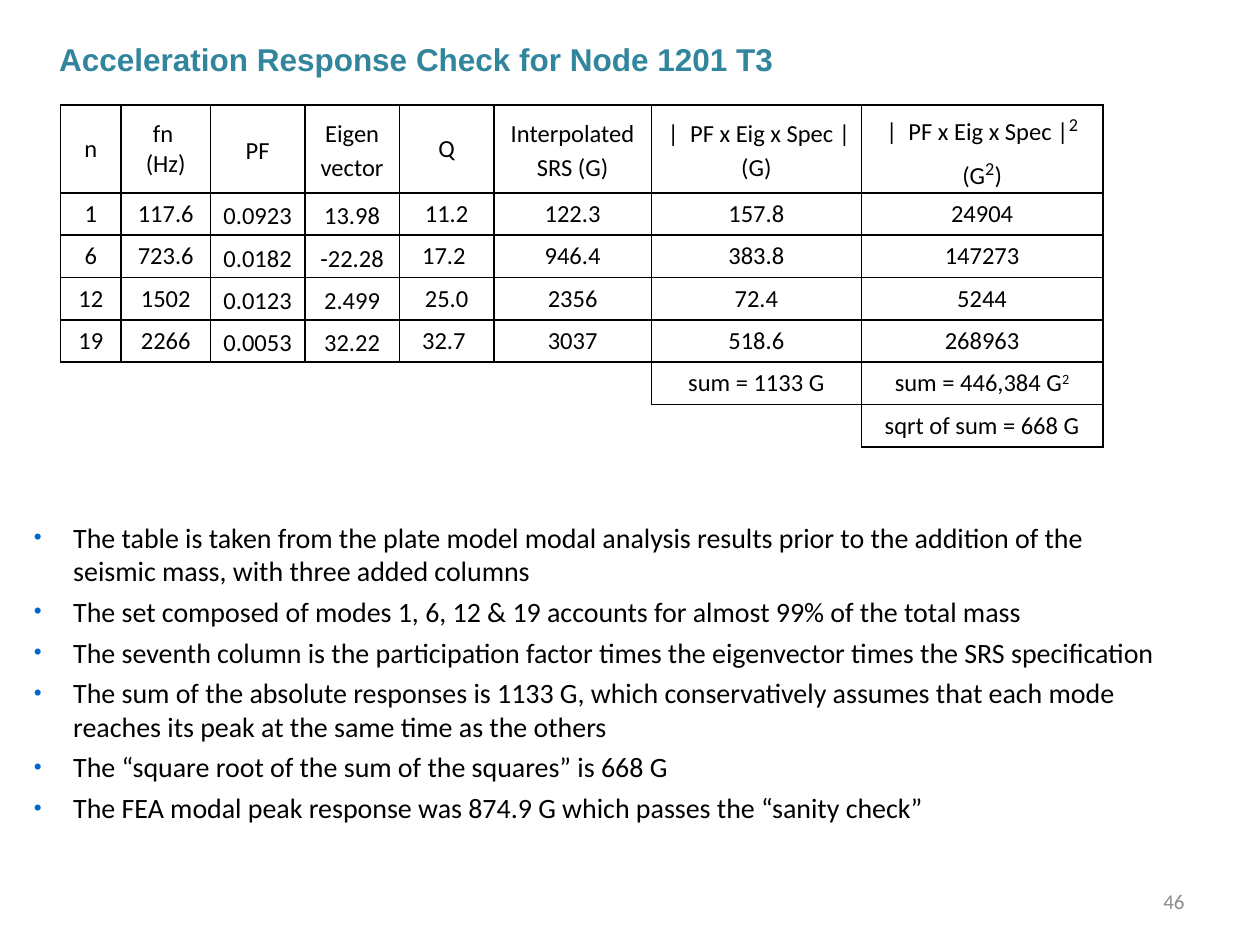
import pptx
import pptx.util
import pptx.dml.color
import pptx.enum.text
import pptx.oxml.ns
import lxml.etree

Pt = pptx.util.Pt
ALIGN = pptx.enum.text.PP_ALIGN
MIDDLE = pptx.enum.text.MSO_ANCHOR.MIDDLE
COLORS = {"title": "31859C", "body": "000000", "bullet": "0066CC",
          "border": "000000", "number": "8C8C8C"}
FORMATS = {
    "title": {"size": Pt(18), "name": "Arial", "bold": True},
    "body": {"size": Pt(16), "name": "Calibri"},
    "cell": {"size": Pt(14), "name": "Calibri"},
    "header_power": {"size": Pt(18), "name": "Calibri"},
    "number": {"size": Pt(12), "name": "Calibri"},
}
GAPS = {"space_before": Pt(2), "space_after": Pt(2)}


def add_run(paragraph, text, style, color, **layout):
    run = paragraph.add_run()
    run.text = text
    run.font.color.rgb = pptx.dml.color.RGBColor.from_string(COLORS[color])
    for target, values in ((run.font, FORMATS[style]), (paragraph, layout)):
        for attribute, value in values.items():
            setattr(target, attribute, value)
    return run


def add_xml(parent, tag, **attributes):
    return lxml.etree.SubElement(parent, pptx.oxml.ns.qn(tag), attributes)


deck = pptx.Presentation()
deck.slide_width, deck.slide_height = Pt(720), Pt(540)
slide = deck.slides.add_slide(deck.slide_layouts[6])

# Slide number
number = slide.shapes.add_textbox(Pt(516), Pt(500.5), Pt(168), Pt(28.75)).text_frame
number.word_wrap = True
number.vertical_anchor = MIDDLE
add_run(number.paragraphs[0], "46", "number", "number", alignment=ALIGN.RIGHT)

# Modal table: "\n" parts paragraphs, "^" switches superscript on and off
modes = [
    ["n", "fn \n(Hz)", "PF", "Eigen\nvector", "Q", "Interpolated SRS (G)",
     " |  PF x Eig x Spec |\n(G)", "|  PF x Eig x Spec |^2^\n(G^2^)"],
    ["1", "117.6", "0.0923", "13.98", "11.2", "122.3", "157.8", "24904"],
    ["6", "723.6", "0.0182", "-22.28", "17.2 ", "946.4", "383.8", "147273"],
    ["12", "1502", "0.0123", "2.499", "25.0", "2356", "72.4", "5244"],
    ["19", "2266", "0.0053", "32.22", "32.7 ", "3037", "518.6", "268963"],
    [""] * 6 + ["sum = 1133 G", "sum = 446,384 G^2^"],
    [""] * 7 + ["sqrt of sum = 668 G"],
]
column_widths = [34.75, 51, 54, 54, 54, 90, 120, 138]
row_heights = [50.25] + [24.2] * 6
table = slide.shapes.add_table(
    len(modes), len(column_widths), Pt(34.5), Pt(60),
    Pt(sum(column_widths)), Pt(sum(row_heights))).table
table.first_row = table.horz_banding = False
for column, width in zip(table.columns, column_widths):
    column.width = Pt(width)
for row, height in zip(table.rows, row_heights):
    row.height = Pt(height)

for r, mode in enumerate(modes):
    for c, content in enumerate(mode):
        cell = table.cell(r, c)
        side = 0.5 if r and c > 5 else 5
        margins = {"margin_left": Pt(side), "margin_right": Pt(side),
                   "margin_top": Pt(0), "margin_bottom": Pt(0),
                   "vertical_anchor": MIDDLE}
        for attribute, value in margins.items():
            setattr(cell, attribute, value)

        # An edge is drawn where the cell or its neighbour holds text
        neighbours = {"a:lnL": (r, c - 1), "a:lnR": (r, c + 1),
                      "a:lnT": (r - 1, c), "a:lnB": (r + 1, c)}
        for edge, (nr, nc) in neighbours.items():
            inside = 0 <= nr < len(modes) and 0 <= nc < len(mode)
            drawn = content or (inside and modes[nr][nc])
            line = add_xml(cell._tc.get_or_add_tcPr(), edge, w=str(Pt(1)))
            if drawn:
                add_xml(add_xml(line, "a:solidFill"), "a:srgbClr", val=COLORS["border"])
            else:
                add_xml(line, "a:noFill")
        cell.fill.background()
        if not content:
            continue

        spacing = 1.15 if (r and c in (2, 3)) or (not r and c in (2, 3, 5, 6, 7)) else 1.0
        for i, text in enumerate(content.split("\n")):
            frame = cell.text_frame
            paragraph = frame.add_paragraph() if i else frame.paragraphs[0]
            for j, part in enumerate(text.split("^")):
                if not part:
                    continue
                power = j % 2 == 1
                style = "header_power" if power and not r else "cell"
                run = add_run(paragraph, part, style, "body",
                              alignment=ALIGN.CENTER, line_spacing=spacing)
                if power:
                    run._r.get_or_add_rPr().set("baseline", "30000")

# Bulleted remarks
remarks = [
    "The table is taken from the plate model modal analysis results prior to the "
    "addition of the seismic mass, with three added columns",
    "The set composed of modes 1, 6, 12 & 19 accounts for almost 99% of the total mass",
    "The seventh column is the participation factor times the eigenvector times the "
    "SRS specification",
    "The sum of the absolute responses is 1133 G, which conservatively assumes that "
    "each mode reaches its peak at the same time as the others",
    "The “square root of the sum of the squares” is 668 G",
    "The FEA modal peak response was 874.9 G which passes the “sanity check”",
]
notes = slide.shapes.add_textbox(Pt(12.25), Pt(293.75), Pt(654.5), Pt(201.5)).text_frame
notes.word_wrap = True
for i, remark in enumerate(remarks):
    paragraph = notes.add_paragraph() if i else notes.paragraphs[0]
    add_run(paragraph, remark, "body", "body", **GAPS)
    properties = paragraph._p.get_or_add_pPr()
    properties.set("marL", str(Pt(22.5)))
    properties.set("indent", str(Pt(-22.5)))
    add_xml(add_xml(properties, "a:buClr"), "a:srgbClr", val=COLORS["bullet"])
    add_xml(properties, "a:buSzPct", val="80000")
    add_xml(properties, "a:buFont", typeface="Arial")
    add_xml(properties, "a:buChar", char="•")

# Title
title = slide.shapes.add_textbox(Pt(26.75), Pt(19.5), Pt(615), Pt(29)).text_frame
title.word_wrap = True
add_run(title.paragraphs[0], "Acceleration Response Check for Node 1201 T3",
        "title", "title", **GAPS)

deck.save("out.pptx")
